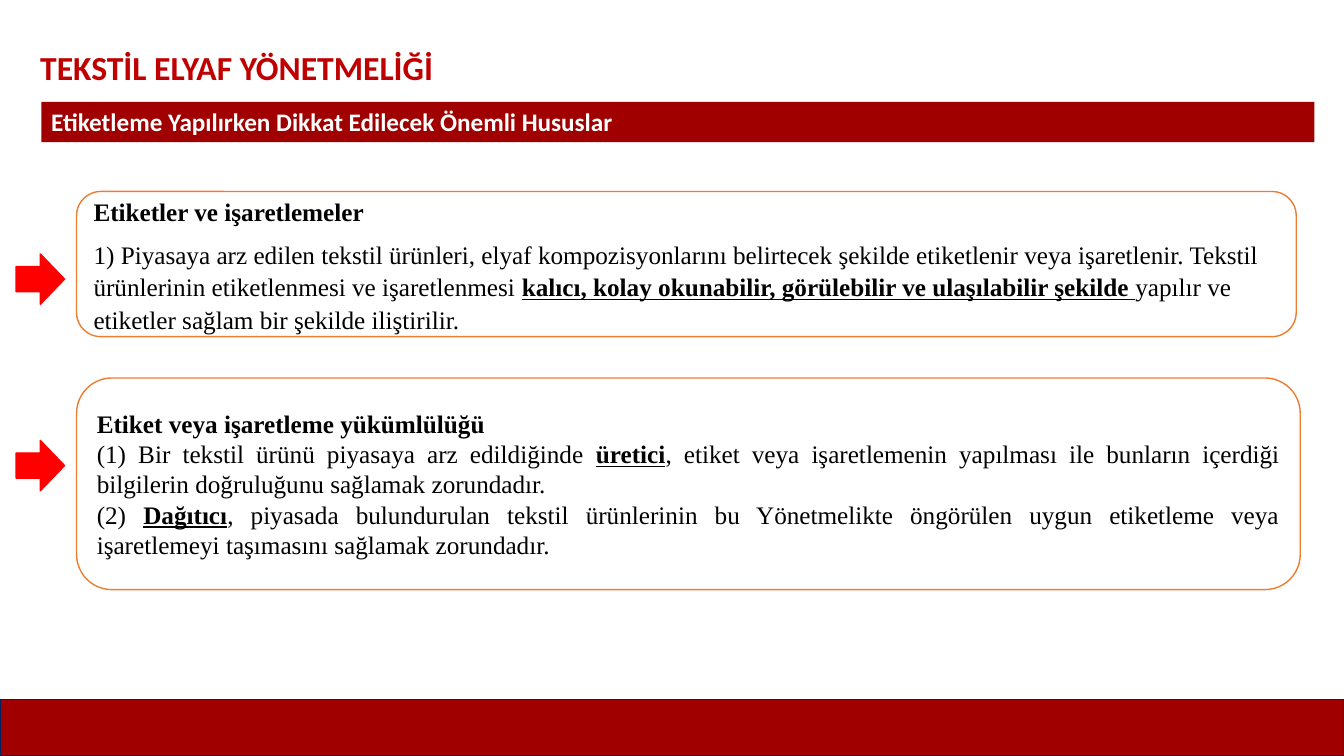
from pptx import Presentation
from pptx.dml.color import RGBColor
from pptx.enum.shapes import MSO_SHAPE as Shape
from pptx.enum.text import MSO_ANCHOR as Anchor, PP_ALIGN as Align
from pptx.util import Pt

DARK_RED = RGBColor(0xA0, 0x00, 0x00)
TITLE_RED = RGBColor(0xC0, 0x00, 0x00)
RED = RGBColor(0xFF, 0x00, 0x00)
NAVY = RGBColor(0x00, 0x20, 0x60)
ORANGE = RGBColor(0xED, 0x7D, 0x31)
WHITE = RGBColor(0xFF, 0xFF, 0xFF)
BLACK = RGBColor(0x00, 0x00, 0x00)

LABELS = ("Etiketler ve işaretlemeler", [
    ["1) Piyasaya arz edilen tekstil ürünleri, elyaf kompozisyonlarını belirtecek "
     "şekilde etiketlenir veya işaretlenir. Tekstil ürünlerinin etiketlenmesi ve "
     "işaretlenmesi ",
     "kalıcı, kolay okunabilir, görülebilir ve ulaşılabilir şekilde ",
     "yapılır ve etiketler sağlam bir şekilde iliştirilir."],
])
DUTIES = ("Etiket veya işaretleme yükümlülüğü", [
    ["(1) Bir tekstil ürünü piyasaya arz edildiğinde ", "üretici",
     ", etiket veya işaretlemenin yapılması ile bunların içerdiği bilgilerin "
     "doğruluğunu sağlamak zorundadır."],
    ["(2) ", "Dağıtıcı",
     ", piyasada bulundurulan tekstil ürünlerinin bu Yönetmelikte öngörülen uygun "
     "etiketleme veya işaretlemeyi taşımasını sağlamak zorundadır."],
])


def add_panel(page, kind, box, fill, line=None):
    """Add a filled shape, outlined when a line colour is given."""
    panel = page.shapes.add_shape(kind, *map(Pt, box))
    panel.shadow.inherit = False
    panel.fill.solid()
    panel.fill.fore_color.rgb = fill
    if line is None:
        panel.line.fill.background()
    else:
        panel.line.color.rgb = line
        panel.line.width = Pt(1)
    return panel


def style(para, name, size, color, bold, align=Align.LEFT):
    """Set the font and alignment of a paragraph."""
    para.alignment = align
    para.font.name = name
    para.font.size = Pt(size)
    para.font.color.rgb = color
    para.font.bold = bold


def add_title(page, box):
    """Add the slide title."""
    frame = page.shapes.add_textbox(*map(Pt, box)).text_frame
    frame.word_wrap = True
    para = frame.paragraphs[0]
    para.text = "TEKSTİL ELYAF YÖNETMELİĞİ"
    style(para, "Calibri", 24, TITLE_RED, True)


def add_subtitle_bar(page, box):
    """Add the red bar with the subtitle."""
    frame = add_panel(page, Shape.RECTANGLE, box, DARK_RED).text_frame
    frame.vertical_anchor = Anchor.TOP
    para = frame.paragraphs[0]
    para.text = "Etiketleme Yapılırken Dikkat Edilecek Önemli Hususlar"
    style(para, "Calibri", 18, WHITE, True, Align.JUSTIFY)


def add_rule(page, box, rule, align, line_spacing=1.0, gap=0):
    """Add a rounded box with a heading and clauses, and the arrow to its left."""
    left, top = box[:2]
    heading, clauses = rule
    frame = add_panel(page, Shape.ROUNDED_RECTANGLE, box, WHITE, ORANGE).text_frame
    frame.vertical_anchor = Anchor.MIDDLE
    for index, parts in enumerate([[heading], *clauses]):
        para = frame.add_paragraph() if index else frame.paragraphs[0]
        para.line_spacing = line_spacing
        para.space_after = Pt(gap)
        style(para, "Times New Roman", 18, BLACK, index == 0,
              align if index else Align.LEFT)
        for position, part in enumerate(parts):
            span = para.add_run()
            span.text = part
            if position == 1:
                span.font.bold = True
                span.font.underline = True
    add_panel(page, Shape.RIGHT_ARROW, (left - 43.2, top + 44.6, 34.6, 36), RED, RED)


def main():
    """Build the slide and save it."""
    deck = Presentation()
    deck.slide_width, deck.slide_height = Pt(960), Pt(540)
    page = deck.slides.add_slide(deck.slide_layouts[6])
    add_panel(page, Shape.RECTANGLE, (0, 499.7, 960, 40.3), DARK_RED, NAVY)
    add_subtitle_bar(page, (29.5, 72.7, 909.4, 28.8))
    add_title(page, (21.6, 30.2, 885, 36))
    add_rule(page, (54.7, 136.8, 871.2, 103.7), LABELS, Align.LEFT, 1.07, 8)
    add_rule(page, (54.7, 270, 874.1, 151.2), DUTIES, Align.JUSTIFY)
    deck.save("out.pptx")


if __name__ == "__main__":
    main()
